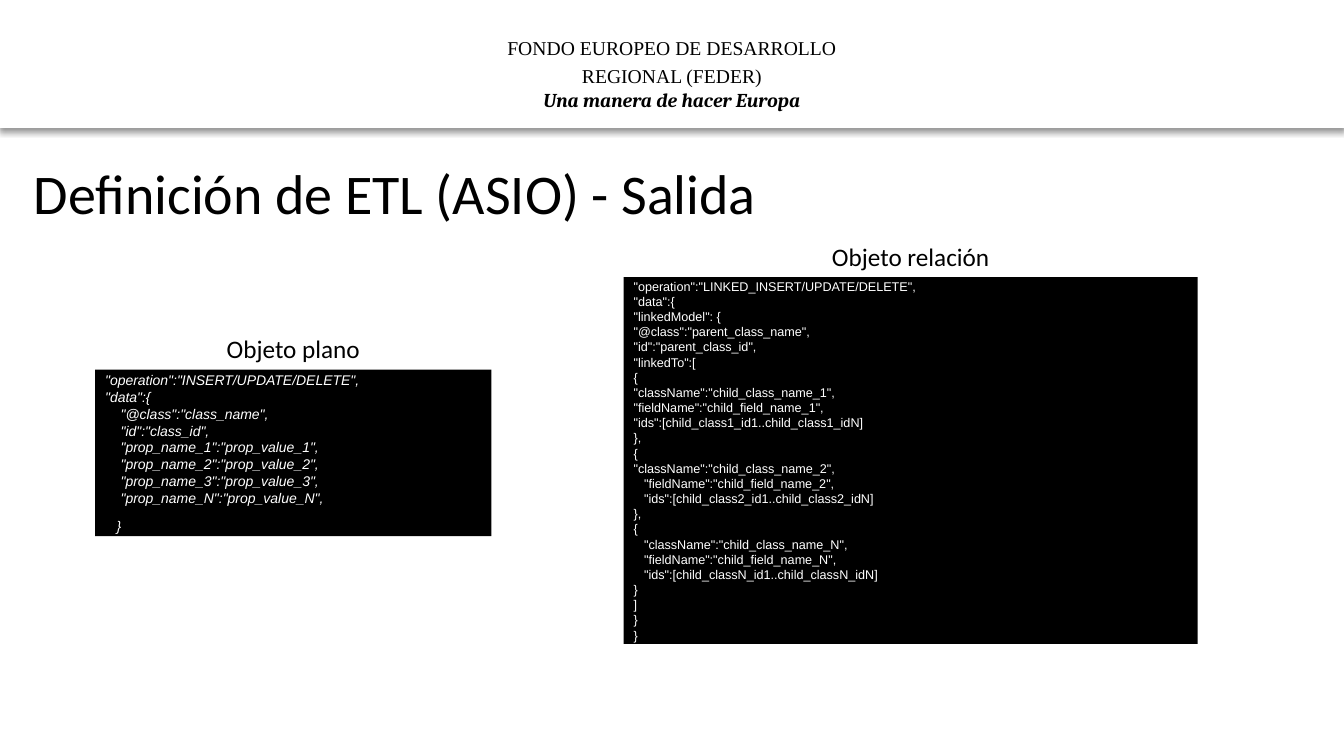
from lxml import etree
from pptx import Presentation
from pptx.dml.color import RGBColor
from pptx.enum import shapes, text
from pptx.oxml.ns import qn
from pptx.util import Pt

BLACK, WHITE = "000000", "FFFFFF"
LEFT, CENTER = text.PP_ALIGN.LEFT, text.PP_ALIGN.CENTER

PLAIN_OBJECT = '''"operation":"INSERT/UPDATE/DELETE",
"data":{
    "@class":"class_name",
    "id":"class_id",
    "prop_name_1":"prop_value_1",
    "prop_name_2":"prop_value_2",
    "prop_name_3":"prop_value_3",
    "prop_name_N":"prop_value_N",
   }'''

RELATION_OBJECT = '''"operation":"LINKED_INSERT/UPDATE/DELETE",
"data":{
"linkedModel": {
"@class":"parent_class_name",
"id":"parent_class_id",
"linkedTo":[
{
"className":"child_class_name_1",
"fieldName":"child_field_name_1",
"ids":[child_class1_id1..child_class1_idN]
},
{
"className":"child_class_name_2",
   "fieldName":"child_field_name_2",
   "ids":[child_class2_id1..child_class2_idN]
},
{
   "className":"child_class_name_N",
   "fieldName":"child_field_name_N",
   "ids":[child_classN_id1..child_classN_idN]
}
]
}
}'''


def rgb(color):
    return RGBColor.from_string(color)


def write(tf, lines, align, color, **font):
    """Fill a text frame with one paragraph per line, all in one format."""
    for i, line in enumerate(lines):
        p = tf.paragraphs[0] if i == 0 else tf.add_paragraph()
        p.alignment = align
        r = p.add_run()
        r.text = line
        r.font.color.rgb = rgb(color)
        for name, value in font.items():
            setattr(r.font, name, value)


prs = Presentation()
prs.slide_width, prs.slide_height = Pt(960), Pt(540)
s = prs.slides.add_slide(prs.slide_layouts[5])

# Header band with a soft shadow below
band = s.shapes.add_shape(shapes.MSO_SHAPE.RECTANGLE, 0, 0, Pt(960), Pt(91))
band.fill.solid()
band.fill.fore_color.rgb = rgb(WHITE)
band.line.color.rgb = rgb(WHITE)
band.line.width = Pt(1)
band.shadow.inherit = False
effects = band._element.spPr.find(qn("a:effectLst"))
shadow = etree.SubElement(effects, qn("a:outerShdw"), blurRad=str(Pt(4)),
                          dist=str(Pt(3)), dir="5400000", algn="t", rotWithShape="0")
shade = etree.SubElement(shadow, qn("a:srgbClr"), val=BLACK)
etree.SubElement(shade, qn("a:alpha"), val="40000")

tf = s.shapes.add_textbox(Pt(321), Pt(18.7), Pt(318), Pt(65)).text_frame
tf.word_wrap = True
write(tf, ["FONDO EUROPEO DE DESARROLLO REGIONAL (FEDER)", "Una manera de hacer Europa"],
      CENTER, BLACK, size=Pt(14), name="Times New Roman")
fund, motto = tf.paragraphs
fund.line_spacing = 1.2
for name, value in dict(name="Cambria", bold=True, italic=True).items():
    setattr(motto.runs[0].font, name, value)

# Title
title = s.shapes.title
title.left, title.top, title.width, title.height = Pt(17), Pt(109.5), Pt(926), Pt(55.5)
tf = title.text_frame
tf.auto_size = text.MSO_AUTO_SIZE.NONE
tf.vertical_anchor = text.MSO_ANCHOR.TOP
write(tf, ["Definición de ETL (ASIO) - Salida"], LEFT, BLACK, size=Pt(40), name="Calibri")

# Code panels, each with a centred caption resting on its top edge
CAPTION_HEIGHT = 29
panels = [
    ("Objeto plano", PLAIN_OBJECT, (68, 264, 283, 119), 10, True),
    ("Objeto relación", RELATION_OBJECT, (445.5, 198, 410, 262), 9, False),
]
code_frames = []
for caption, code, (left, top, width, height), size, italic in panels:
    sp = s.shapes.add_shape(shapes.MSO_SHAPE.RECTANGLE,
                            Pt(left), Pt(top), Pt(width), Pt(height))
    sp.shadow.inherit = False
    sp.fill.solid()
    sp.fill.fore_color.rgb = rgb(BLACK)
    sp.line.fill.background()
    tf = sp.text_frame
    tf.word_wrap = True
    tf.vertical_anchor = text.MSO_ANCHOR.MIDDLE
    tf.margin_top = tf.margin_bottom = 0
    write(tf, code.split("\n"), LEFT, WHITE, size=Pt(size), name="Arial", italic=italic)
    code_frames.append(tf)

    box = s.shapes.add_textbox(Pt(left), Pt(top - CAPTION_HEIGHT - 0.5),
                               Pt(width), Pt(CAPTION_HEIGHT))
    box.text_frame.word_wrap = True
    write(box.text_frame, [caption], CENTER, BLACK, size=Pt(18), name="Calibri")

# The closing brace of the plain object stands apart
code_frames[0].paragraphs[-1].space_before = Pt(8)

prs.save("out.pptx")
